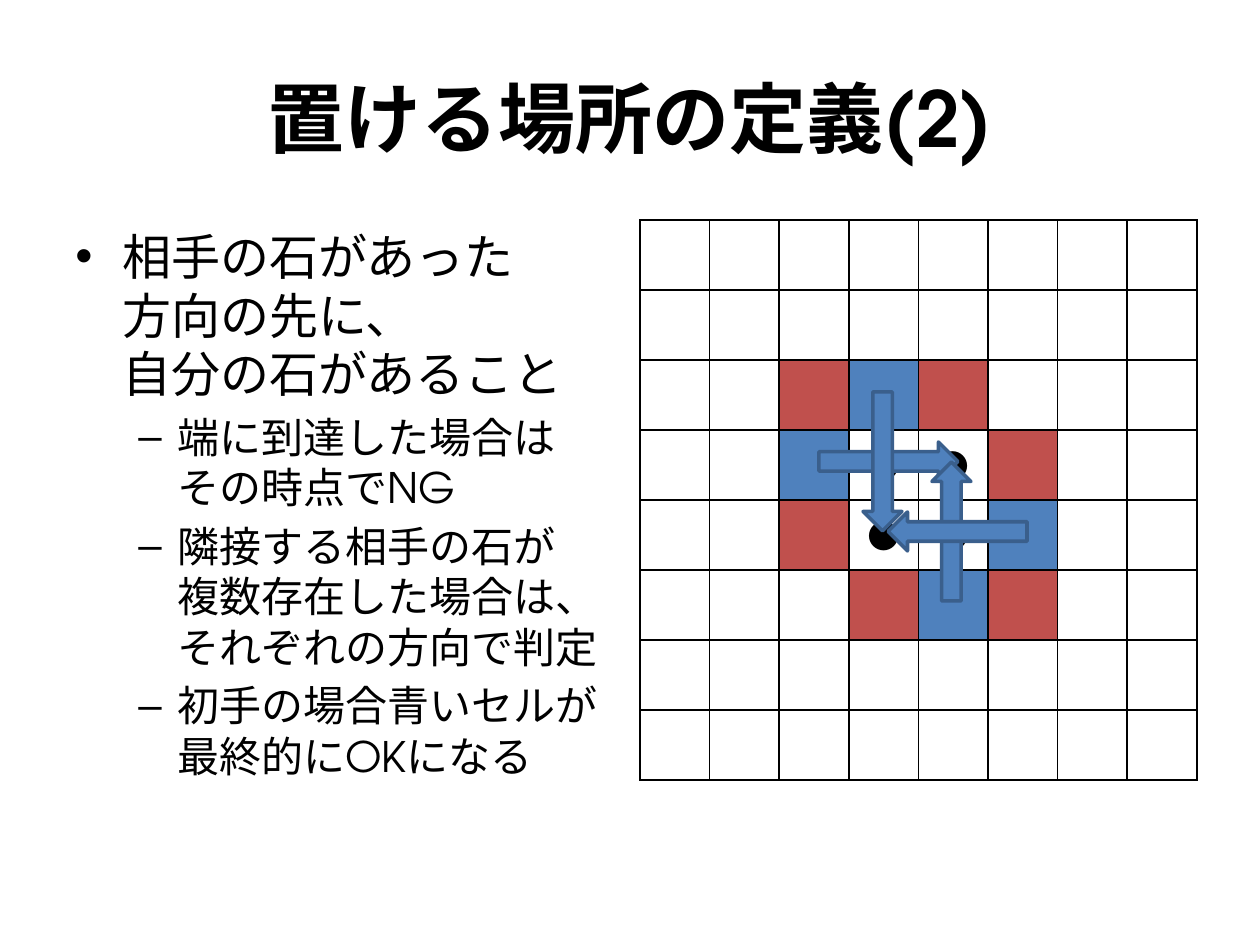
from dataclasses import dataclass

from lxml import etree
from pptx import Presentation
from pptx import util as u
from pptx.dml.color import RGBColor
from pptx.enum import lang, shapes, text
from pptx.oxml.ns import qn


@dataclass(frozen=True)
class Theme:
    font: str = "TeX Gyre Adventor"
    ink: RGBColor = RGBColor(0x00, 0x00, 0x00)
    blue: RGBColor = RGBColor(0x4F, 0x81, 0xBD)
    red: RGBColor = RGBColor(0xC0, 0x50, 0x4D)
    arrow_edge: RGBColor = RGBColor(0x3A, 0x5F, 0x8C)
    title: int = 44
    point: int = 28
    subpoint: int = 24
    stone: int = 28


theme = Theme()


def px(n):
    """Pixels, at 126 to the inch, as EMU."""
    return u.Emu(round(n * 914400 / 126))


def write(paragraph, content, *, size, bold=False, align=text.PP_ALIGN.LEFT,
          bullet=None, left=0, hanging=0, before=0):
    paragraph.text = content
    paragraph.alignment = align
    paragraph.space_before = u.Pt(before)
    for run in paragraph.runs:
        run.font.name = theme.font
        run.font.size = u.Pt(size)
        run.font.bold = bold
        run.font.color.rgb = theme.ink
        run.font.language_id = lang.MSO_LANGUAGE_ID.JAPANESE
    if bullet:
        props = paragraph._p.get_or_add_pPr()
        props.set("marL", str(px(left)))
        props.set("indent", str(-px(hanging)))
        etree.SubElement(props, qn("a:buFont"), typeface="Arial")
        etree.SubElement(props, qn("a:buChar"), char=bullet)


prs = Presentation()
prs.slide_width, prs.slide_height = px(1260), px(945)
slide = prs.slides.add_slide(prs.slide_layouts[6])

# Title
title = slide.shapes.add_textbox(px(63), px(38), px(1134), px(157)).text_frame
title.word_wrap = True
title.vertical_anchor = text.MSO_ANCHOR.MIDDLE
write(title.paragraphs[0], "置ける場所の定義(2)", size=theme.title, bold=True,
      align=text.PP_ALIGN.CENTER)

# Rules
main_point = dict(size=theme.point, bullet="•", left=47, hanging=47, before=5.6)
sub_point = dict(size=theme.subpoint, bullet="–", left=102, hanging=39, before=4.8)
rules = [
    ("相手の石があった\n方向の先に、\n自分の石があること", main_point),
    ("端に到達した場合は\nその時点でNG", sub_point),
    ("隣接する相手の石が\n複数存在した場合は、それぞれの方向で判定", sub_point),
    ("初手の場合青いセルが最終的にOKになる", sub_point),
]
body = slide.shapes.add_textbox(px(63), px(220), px(557), px(624)).text_frame
body.word_wrap = True
for i, (rule, style) in enumerate(rules):
    paragraph = body.add_paragraph() if i else body.paragraphs[0]
    write(paragraph, rule, **style)

# Board: R and B are coloured cells, the circles are stones
BOARD = [
    "........",
    "........",
    "..RBR...",
    "..B○●R..",
    "..R●○B..",
    "...RBR..",
    "........",
    "........",
]
cell_colours = {"R": theme.red, "B": theme.blue}
board = slide.shapes.add_table(8, 8, px(640), px(220), px(557), px(560)).table
board.first_row = board.horz_banding = False
for column in board.columns:
    column.width = px(557) // 8
for row in board.rows:
    row.height = px(560) // 8

for r, marks in enumerate(BOARD):
    for c, mark in enumerate(marks):
        cell = board.cell(r, c)
        cell.margin_top = cell.margin_bottom = 0
        cell.vertical_anchor = text.MSO_ANCHOR.MIDDLE
        props = cell._tc.get_or_add_tcPr()
        for side in ("a:lnL", "a:lnR", "a:lnT", "a:lnB"):
            border = etree.SubElement(props, qn(side), w=str(u.Pt(1)))
            solid = etree.SubElement(border, qn("a:solidFill"))
            etree.SubElement(solid, qn("a:srgbClr"), val=str(theme.ink))
        if mark in cell_colours:
            cell.fill.solid()
            cell.fill.fore_color.rgb = cell_colours[mark]
        else:
            cell.fill.background()
        if mark in "○●":
            write(cell.text_frame.paragraphs[0], mark, size=theme.stone,
                  align=text.PP_ALIGN.CENTER)

# Directions from each blue cell over the opposing stone
for left, top, rotation in [(819, 442, 0), (813, 442, 90),
                            (882, 512, 270), (888, 512, 180)]:
    arrow = slide.shapes.add_shape(shapes.MSO_SHAPE.RIGHT_ARROW,
                                   px(left), px(top), px(139), px(39))
    arrow.rotation = rotation
    arrow.shadow.inherit = False
    arrow.fill.solid()
    arrow.fill.fore_color.rgb = theme.blue
    arrow.line.color.rgb = theme.arrow_edge
    arrow.line.width = u.Pt(2)

prs.save("out.pptx")
